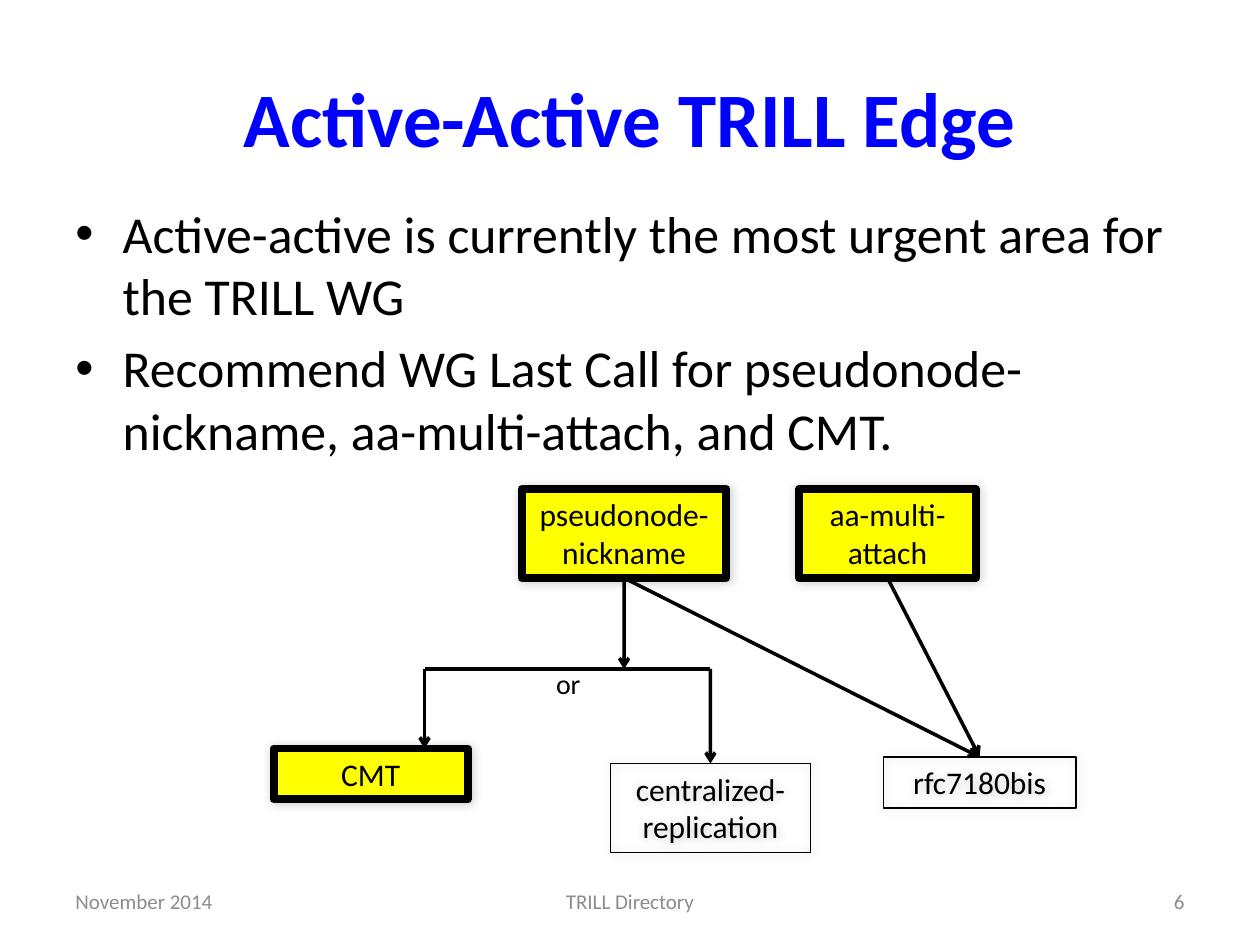
from lxml import etree
from pptx import Presentation
from pptx.dml import color
from pptx.enum import shapes, text
from pptx.oxml import ns
from pptx.util import Pt

LEFT, CENTER, RIGHT = text.PP_ALIGN.LEFT, text.PP_ALIGN.CENTER, text.PP_ALIGN.RIGHT
TOP, MIDDLE = text.MSO_ANCHOR.TOP, text.MSO_ANCHOR.MIDDLE
BOTTOM_SIDE, TOP_SIDE = 2, 0


def rgb(value):
    return color.RGBColor.from_string(value)


def child(parent, tag, **attrs):
    return etree.SubElement(parent, ns.qn(tag), attrs)


class Deck:
    font = "Calibri"
    ink, title_ink, muted, highlight = "000000", "0000FF", "8C8C8C", "FFFF00"

    def __init__(self, width, height):
        self.prs = Presentation()
        self.prs.slide_width, self.prs.slide_height = Pt(width), Pt(height)
        self.s = self.prs.slides.add_slide(self.prs.slide_layouts[6])

    def fill_text(self, sp, lines, size, ink=None, align=LEFT, anchor=TOP, bold=False):
        tf = sp.text_frame
        tf.word_wrap = True
        tf.vertical_anchor = anchor
        tf.text = "\n".join(lines)
        for p in tf.paragraphs:
            p.alignment = align
            for r in p.runs:
                r.font.name, r.font.size, r.font.bold = self.font, Pt(size), bold
                r.font.color.rgb = rgb(ink or self.ink)

    def text(self, x, y, w, h, lines, size, **style):
        sp = self.s.shapes.add_textbox(Pt(x), Pt(y), Pt(w), Pt(h))
        self.fill_text(sp, lines, size, **style)
        return sp

    def bullets(self, x, y, w, h, lines, size):
        sp = self.text(x, y, w, h, lines, size)
        for p in sp.text_frame.paragraphs:
            p.space_before = Pt(size * 0.2)
            pPr = p._p.get_or_add_pPr()
            pPr.set("marL", str(Pt(27)))
            pPr.set("indent", str(Pt(-27)))
            child(pPr, "a:buFont", typeface="Arial")
            child(pPr, "a:buChar", char="•")

    def box(self, x, y, w, h, label, marked=False):
        sp = self.s.shapes.add_shape(shapes.MSO_SHAPE.RECTANGLE, Pt(x), Pt(y), Pt(w), Pt(h))
        if marked:
            sp.fill.solid()
            sp.fill.fore_color.rgb = rgb(self.highlight)
        else:
            sp.fill.background()
        sp.line.color.rgb = rgb(self.ink)
        sp.line.width = Pt(4.5 if marked else 0.75)
        self.shadow(sp)
        self.fill_text(sp, [label], 18, align=CENTER)
        return sp

    def shadow(self, sp):
        sp.shadow.inherit = False
        effects = sp._element.spPr.find(ns.qn("a:effectLst"))
        outer = child(effects, "a:outerShdw", blurRad=str(Pt(6)), dist=str(Pt(1)),
                      dir="2700000", algn="tl", rotWithShape="0")
        child(child(outer, "a:srgbClr", val=self.ink), "a:alpha", val="20000")

    def line(self, start, end, begin=None, finish=None, arrow=True):
        c = self.s.shapes.add_connector(shapes.MSO_CONNECTOR.STRAIGHT,
                                        *map(Pt, start + end))
        if begin:
            c.begin_connect(begin, BOTTOM_SIDE)
        if finish:
            c.end_connect(finish, TOP_SIDE)
        c.line.color.rgb = rgb(self.ink)
        c.line.width = Pt(2)
        spPr = c._element.spPr
        if arrow:
            child(spPr.find(ns.qn("a:ln")), "a:tailEnd", type="arrow")
        child(spPr, "a:effectLst")


def main():
    d = Deck(720, 540)

    # Title and bullets
    d.text(36, 21.6, 648, 90, ["Active-Active TRILL Edge"], 44,
           ink=d.title_ink, align=CENTER, anchor=MIDDLE, bold=True)
    d.bullets(36, 111.6, 648, 144.7, [
        "Active-active is currently the most urgent area for the TRILL WG",
        "Recommend WG Last Call for pseudonode-nickname, aa-multi-attach, and CMT.",
    ], 29.6)

    # Footer
    for x, w, label, align in ((36, 168, "November 2014", LEFT),
                               (246, 228, "TRILL Directory", CENTER),
                               (516, 168, "6", RIGHT)):
        d.text(x, 500.5, w, 28.75, [label], 12, ink=d.muted, align=align, anchor=MIDDLE)

    # Draft boxes
    pseudonode = d.box(298.2, 279.4, 116.9, 50.9, "pseudonode-nickname", marked=True)
    multi_attach = d.box(456.7, 279.4, 100.9, 50.9, "aa-multi-attach", marked=True)
    rfc = d.box(504.8, 432.6, 110, 29.1, "rfc7180bis")
    d.box(156.4, 427.7, 110.9, 29.1, "CMT", marked=True)
    central = d.box(348.7, 436.3, 114.5, 50.9, "centralized-replication")

    # Arrows to the RFC
    for source in (multi_attach, pseudonode):
        d.line((0, 0), (0, 0), begin=source, finish=rfc)

    # Fork to the two alternatives
    fork_y, left_x, right_x = 382.3, 242.6, 406
    d.line((356.6, 330.3), (356.6, fork_y), begin=pseudonode)
    d.line((left_x, fork_y), (right_x, fork_y), arrow=False)
    d.line((right_x, fork_y), (right_x, 436.3), finish=central)
    d.line((left_x, fork_y), (left_x, 427.7))
    d.text(301, 377.5, 47.5, 26.7, ["or"], 16, align=CENTER)

    d.prs.save("out.pptx")


if __name__ == "__main__":
    main()
